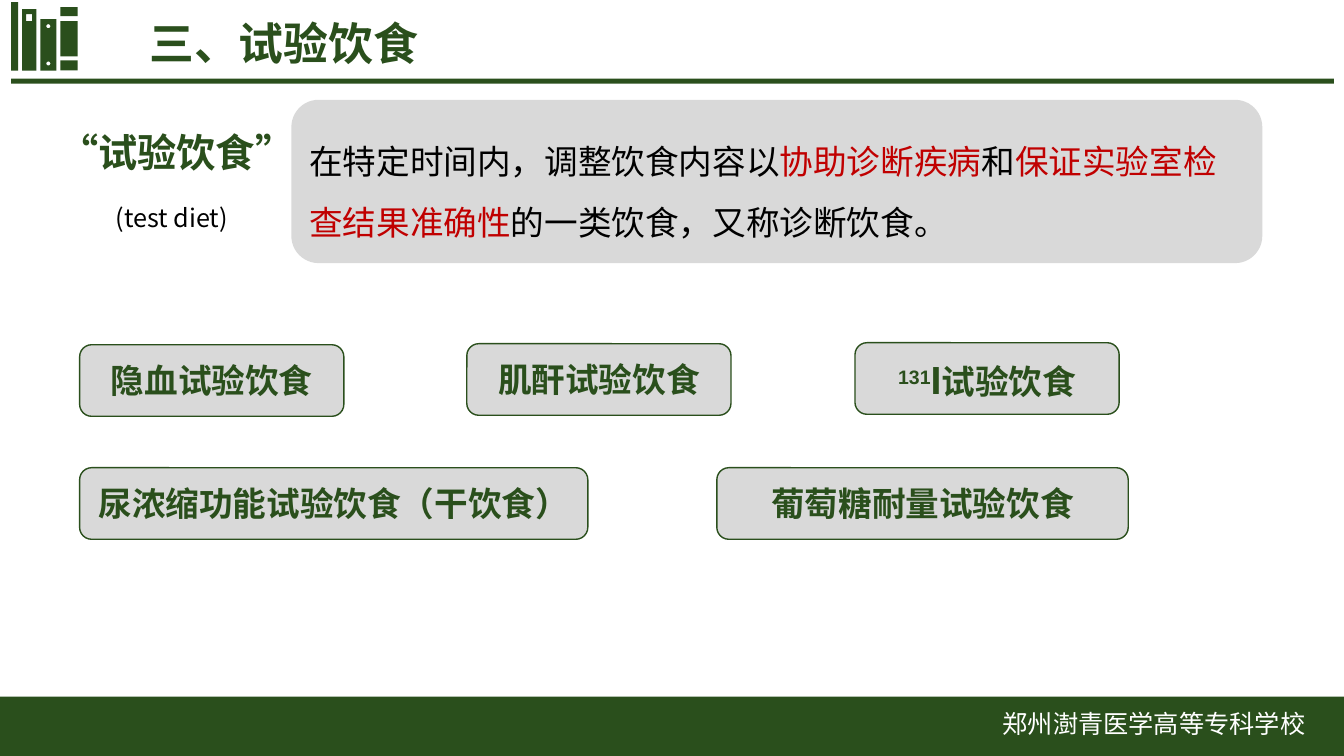
from math import cos, pi, sin

from lxml.etree import SubElement
from pptx import Presentation
from pptx.dml.color import RGBColor
from pptx.enum.shapes import MSO_SHAPE
from pptx.enum.text import MSO_ANCHOR, MSO_AUTO_SIZE, PP_ALIGN
from pptx.oxml.ns import qn
from pptx.util import Inches, Pt

GREEN = RGBColor(0x2A, 0x4F, 0x1C)
GRAY = RGBColor(0xD9, 0xD9, 0xD9)
RED = RGBColor(0xC0, 0x00, 0x00)
BLACK = RGBColor(0x00, 0x00, 0x00)
WHITE = RGBColor(0xFF, 0xFF, 0xFF)
SANS = "Noto Sans CJK SC"
LATIN = "Arial"


def rectangle_points(left, top, width, height):
    right, bottom = left + width, top + height
    return [(left, top), (right, top), (right, bottom), (left, bottom)]


def circle_points(x, y, radius, count=24):
    angles = [2 * pi * step / count for step in range(count)]
    return [(x + radius * cos(a), y + radius * sin(a)) for a in angles]


class SlideBuilder:
    def __init__(self, deck):
        self.page = deck.slides.add_slide(deck.slide_layouts[5])

    def paint(self, shape, fill, line=None):
        shape.shadow.inherit = False
        shape.fill.solid()
        shape.fill.fore_color.rgb = fill
        if line is None:
            shape.line.fill.background()
        else:
            shape.line.color.rgb = line
            shape.line.width = Pt(1)
        return shape

    def block(self, area, fill, line=None, kind=MSO_SHAPE.RECTANGLE):
        shape = self.page.shapes.add_shape(kind, *map(Inches, area))
        return self.paint(shape, fill, line)

    def outline(self, contours, fill):
        builder = None
        for contour in contours:
            points = [(Inches(x), Inches(y)) for x, y in contour]
            if builder is None:
                builder = self.page.shapes.build_freeform(*points[0])
            else:
                builder.move_to(*points[0])
            builder.add_line_segments(points[1:], close=True)
        return self.paint(builder.convert_to_shape(), fill)

    def style_span(self, span, size, color, font, bold):
        span.font.size = Pt(size)
        span.font.bold = bold
        span.font.color.rgb = color
        span.font.name = font
        properties = span.font._element
        SubElement(properties, qn("a:ea")).set("typeface", SANS)

    def fill_text(self, shape, spans, size, color, font=SANS, bold=False,
                  align=PP_ALIGN.LEFT, anchor=MSO_ANCHOR.MIDDLE, wrap=True, spacing=1.0):
        frame = shape.text_frame
        frame.word_wrap = wrap
        frame.auto_size = MSO_AUTO_SIZE.NONE if wrap else MSO_AUTO_SIZE.SHAPE_TO_FIT_TEXT
        frame.vertical_anchor = anchor
        para = frame.paragraphs[0]
        para.alignment = align
        para.line_spacing = spacing
        for text, *changes in spans:
            span = para.add_run()
            span.text = text
            change = changes[0] if changes else {}
            self.style_span(span, change.get("size", size),
                            change.get("color", color), font, bold)
            if "baseline" in change:
                span.font._element.set("baseline", str(change["baseline"]))

    def title(self, area, text):
        title = self.page.shapes.title
        title.left, title.top, title.width, title.height = map(Inches, area)
        self.fill_text(title, [(text,)], 32, GREEN, bold=True)

    def label(self, area, text, size, color, **style):
        box = self.page.shapes.add_textbox(*map(Inches, area))
        self.fill_text(box, [(text,)], size, color, anchor=MSO_ANCHOR.TOP, **style)

    def definition(self, area, spans):
        panel = self.block(area, GRAY, kind=MSO_SHAPE.ROUNDED_RECTANGLE)
        self.fill_text(panel, spans, 24, BLACK, spacing=1.5)

    def diet(self, left, top, width, spans):
        card = self.block((left, top, width, 0.71), GRAY, GREEN,
                          MSO_SHAPE.ROUNDED_RECTANGLE)
        self.fill_text(card, spans, 24, GREEN, LATIN, True, PP_ALIGN.CENTER)

    def books(self):
        self.block((0.11, 0.02, 0.07, 0.68), GREEN)
        for top, height in ((0.6, 0.1), (0.21, 0.35), (0.07, 0.09)):
            self.block((0.6, top, 0.17, height), GREEN)
        self.outline([rectangle_points(0.4, 0.19, 0.16, 0.51),
                      circle_points(0.48, 0.26, 0.02),
                      circle_points(0.48, 0.63, 0.02)], GREEN)
        self.outline([rectangle_points(0.22, 0.09, 0.14, 0.61),
                      rectangle_points(0.26, 0.14, 0.06, 0.07)], GREEN)


def main():
    deck = Presentation()
    deck.slide_width, deck.slide_height = Inches(13.33), Inches(7.5)
    slide = SlideBuilder(deck)

    slide.block((0.11, 0.78, 13.12, 0.05), GREEN)
    slide.books()
    slide.block((0, 6.91, 13.33, 0.59), GREEN)
    slide.title((1.38, 0.11, 3.63, 0.63), "三、试验饮食")

    slide.label((0.49, 1.22, 2.56, 0.57), "“试验饮食”", 28, GREEN,
                font=LATIN, bold=True, wrap=False)
    slide.definition((2.89, 0.99, 9.63, 1.62), [
        ("在特定时间内，调整饮食内容以",),
        ("协助诊断疾病", {"color": RED}),
        ("和",),
        ("保证实验室检查结果准确性", {"color": RED}),
        ("的一类饮食，又称诊断饮食。",),
    ])
    slide.label((1.05, 1.96, 1.44, 0.4), "(test diet)", 18, BLACK, wrap=False)

    iodine = [("131", {"baseline": 30000}), ("I", {"size": 28}), ("试验饮食",)]
    for left, top, width, spans in (
        (0.79, 3.42, 2.62, [("隐血试验饮食",)]),
        (4.63, 3.41, 2.62, [("肌酐试验饮食",)]),
        (8.48, 3.4, 2.62, iodine),
        (0.79, 4.64, 5.04, [("尿浓缩功能试验饮食（干饮食）",)]),
        (7.11, 4.64, 4.08, [("葡萄糖耐量试验饮食",)]),
    ):
        slide.diet(left, top, width, spans)

    slide.label((9.55, 6.98, 3.79, 0.46), "郑州澍青医学高等专科学校", 18, WHITE,
                align=PP_ALIGN.CENTER)
    deck.save("out.pptx")


if __name__ == "__main__":
    main()
